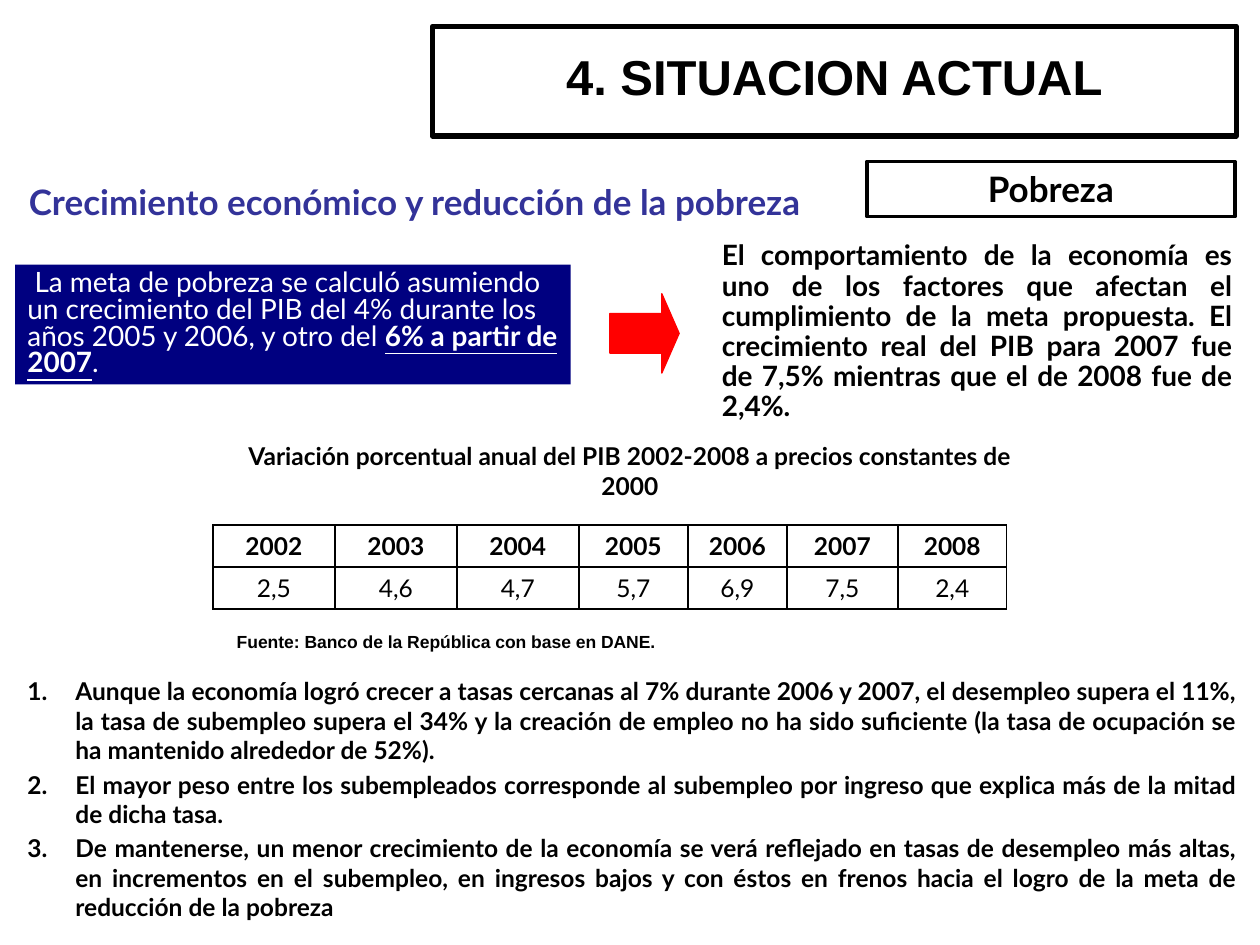
import pptx
import pptx.util
import pptx.dml.color
import pptx.enum.shapes
import pptx.enum.text
import pptx.oxml
import pptx.oxml.ns
from dataclasses import dataclass
from typing import Optional

Pt = pptx.util.Pt
Align = pptx.enum.text.PP_ALIGN
Anchor = pptx.enum.text.MSO_ANCHOR
Kind = pptx.enum.shapes.MSO_SHAPE

INKS = {
    "black": "000000",
    "white": "FFFFFF",
    "navy": "000080",
    "indigo": "333399",
    "red": "FF0000",
}


@dataclass
class Box:
    """A text block; each line is a list of runs, and "_" opens a stressed run."""
    left: float
    top: float
    width: float
    height: float
    lines: list
    size: float
    font: str = "Lato"
    ink: str = "black"
    bold: bool = True
    align: int = Align.LEFT
    anchor: int = Anchor.TOP
    lead: float = 1.0
    fill: Optional[str] = None
    edge: float = 0
    listed: bool = False


BOXES = [
    # Poverty goal and what followed
    Box(8.6, 151.2, 317.5, 68.4,
        [[" La meta de pobreza se calculó asumiendo un crecimiento del PIB del 4% "
          "durante los años 2005 y 2006, y otro del ", "_6% a partir de 2007", "."]],
        16, ink="white", bold=False, lead=0.8, fill="navy"),
    Box(405.4, 134.6, 306, 111.6,
        [["El comportamiento de la economía es uno de los factores que afectan el "
          "cumplimiento de la meta propuesta. El crecimiento real del PIB para 2007 "
          "fue de 7,5% mientras que el de 2008 fue de 2,4%."]],
        16, align=Align.JUSTIFY, lead=0.9),
    # Subtitle
    Box(9.4, 102.2, 668.9, 28.8,
        [["Crecimiento económico y reducción de la pobreza"]],
        20, ink="indigo", lead=0.9),
    # Table heading and its origin
    Box(133.2, 248.4, 453.6, 41,
        [["Variación porcentual anual del PIB 2002-2008 a precios constantes de 2000"]],
        14, align=Align.CENTER, anchor=Anchor.MIDDLE),
    Box(128.2, 357.1, 256.3, 19.4,
        [["Fuente: Banco de la República con base en DANE."]],
        10, font="Arial", anchor=Anchor.MIDDLE),
    # Numbered findings
    Box(8.6, 383, 705.6, 149.8,
        [["Aunque la economía logró crecer a tasas cercanas al 7% durante 2006 y 2007, "
          "el desempleo supera el 11%, la tasa de subempleo supera el 34% y la creación "
          "de empleo no ha sido suficiente (la tasa de ocupación se ha mantenido "
          "alrededor de 52%)."],
         ["El mayor peso entre los subempleados corresponde al subempleo por ingreso "
          "que explica más de la mitad de dicha tasa."],
         ["De mantenerse, un menor crecimiento de la economía se verá reflejado en "
          "tasas de desempleo más altas, en incrementos en el subempleo, en ingresos "
          "bajos y con éstos en frenos hacia el logro de la meta de reducción de la "
          "pobreza"]],
        14, align=Align.JUSTIFY, listed=True),
    # Framed titles
    Box(247, 15.1, 459.4, 62.6, [["4. SITUACION ACTUAL"]], 28, font="Arial",
        align=Align.CENTER, anchor=Anchor.MIDDLE, lead=0.8, fill="white", edge=3),
    Box(495.4, 92.2, 210.2, 31.7, [["Pobreza"]], 20,
        align=Align.CENTER, fill="white", edge=2),
]

RATES = {"2002": "2,5", "2003": "4,6", "2004": "4,7", "2005": "5,7",
         "2006": "6,9", "2007": "7,5", "2008": "2,4"}
WIDTHS = [69.7, 69.7, 69.7, 62.4, 56.6, 63.4, 62.2]
ROW = 24


def tint(name: str) -> pptx.dml.color.RGBColor:
    return pptx.dml.color.RGBColor.from_string(INKS[name])


def style(run, size: float, font: str, ink: str, bold: bool) -> None:
    run.font.size = Pt(size)
    run.font.name = font
    run.font.bold = bold
    run.font.color.rgb = tint(ink)


def add_num(para) -> None:
    """Number a paragraph with a hanging indent."""
    props = para._p.get_or_add_pPr()
    props.set("marL", str(Pt(27.4)))
    props.set("indent", str(-Pt(27.4)))
    mark = pptx.oxml.parse_xml(
        f'<a:buAutoNum {pptx.oxml.ns.nsdecls("a")} type="arabicPeriod"/>')
    props.append(mark)


def draw_box(slide, box: Box) -> None:
    place = [Pt(n) for n in (box.left, box.top, box.width, box.height)]
    if box.fill:
        shape = slide.shapes.add_shape(Kind.RECTANGLE, *place)
        shape.shadow.inherit = False
        shape.fill.solid()
        shape.fill.fore_color.rgb = tint(box.fill)
        if box.edge:
            shape.line.color.rgb = tint("black")
            shape.line.width = Pt(box.edge)
        else:
            shape.line.fill.background()
    else:
        shape = slide.shapes.add_textbox(*place)
    frame = shape.text_frame
    frame.word_wrap = True
    frame.vertical_anchor = box.anchor
    for i, line in enumerate(box.lines):
        para = frame.add_paragraph() if i else frame.paragraphs[0]
        if box.listed:
            add_num(para)
        para.alignment = box.align
        para.line_spacing = box.lead
        if i:
            para.space_before = Pt(box.size * 0.2)
        for text in line:
            key = text.startswith("_")
            run = para.add_run()
            run.text = text.removeprefix("_")
            style(run, box.size, box.font, box.ink, box.bold or key)
            if key:
                run.font.underline = True


def draw_arrow(slide) -> None:
    arrow = slide.shapes.add_shape(
        Kind.RIGHT_ARROW, Pt(348.5), Pt(167.8), Pt(39.6), Pt(45.4))
    arrow.shadow.inherit = False
    arrow.adjustments[0] = 0.5
    arrow.adjustments[1] = 0.25
    arrow.fill.solid()
    arrow.fill.fore_color.rgb = tint("red")
    arrow.line.color.rgb = tint("red")
    arrow.line.width = Pt(0.75)


def frame_cell(cell) -> None:
    """Rule all four sides, ahead of the fill."""
    props = cell._tc.get_or_add_tcPr()
    for i, side in enumerate(("lnL", "lnR", "lnT", "lnB")):
        rule = pptx.oxml.parse_xml(
            f'<a:{side} {pptx.oxml.ns.nsdecls("a")} w="{Pt(1)}"><a:solidFill>'
            f'<a:srgbClr val="{INKS["black"]}"/></a:solidFill></a:{side}>')
        props.insert(i, rule)


def draw_table(slide) -> None:
    rows = [list(RATES), list(RATES.values())]
    table = slide.shapes.add_table(
        len(rows), len(WIDTHS), Pt(121.7), Pt(300),
        Pt(sum(WIDTHS)), Pt(ROW * len(rows))).table
    for col, width in zip(table.columns, WIDTHS):
        col.width = Pt(width)
    for r, row in enumerate(rows):
        table.rows[r].height = Pt(ROW)
        for c, text in enumerate(row):
            cell = table.cell(r, c)
            cell.fill.background()
            frame_cell(cell)
            cell.vertical_anchor = Anchor.BOTTOM
            para = cell.text_frame.paragraphs[0]
            para.text = text
            para.alignment = Align.CENTER
            style(para.runs[0], 14, "Lato", "black", r == 0)


def main() -> None:
    deck = pptx.Presentation()
    deck.slide_width, deck.slide_height = Pt(720), Pt(540)
    slide = deck.slides.add_slide(deck.slide_layouts[6])
    for box in BOXES:
        draw_box(slide, box)
    draw_arrow(slide)
    draw_table(slide)
    deck.save("out.pptx")


if __name__ == "__main__":
    main()
